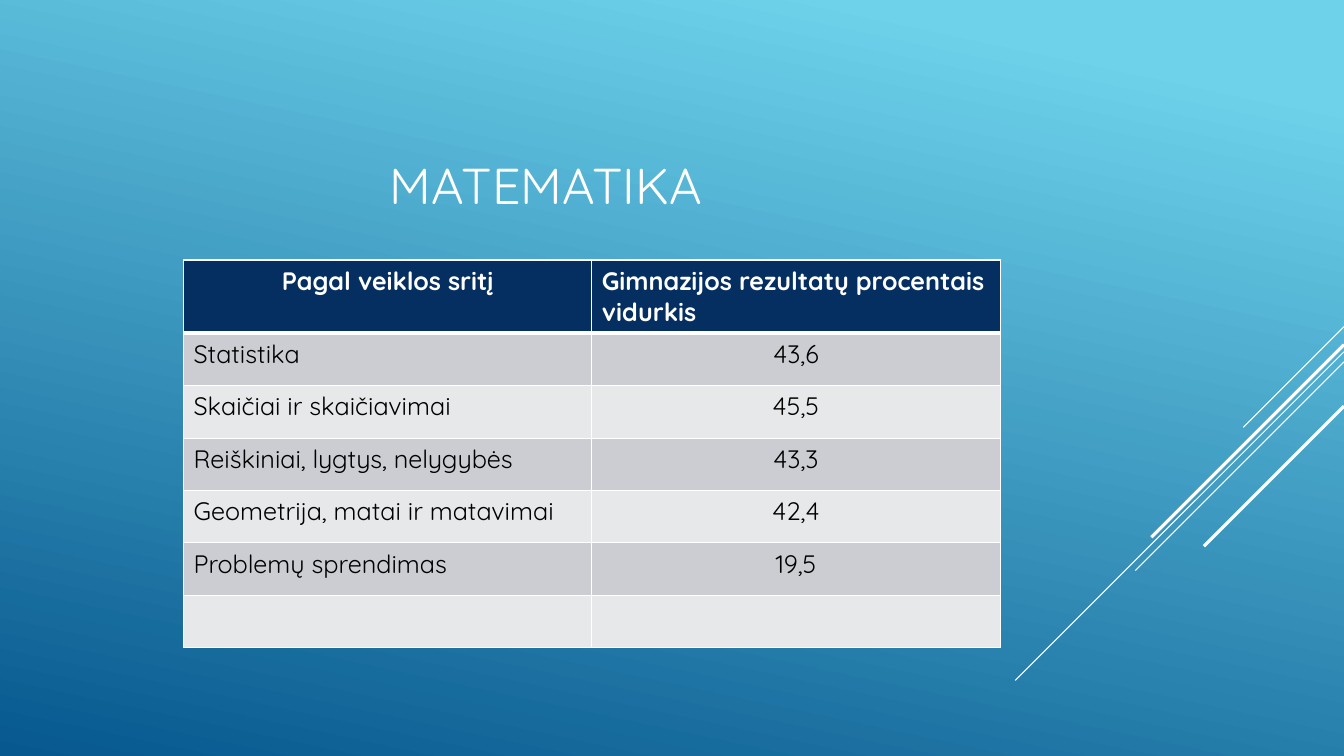
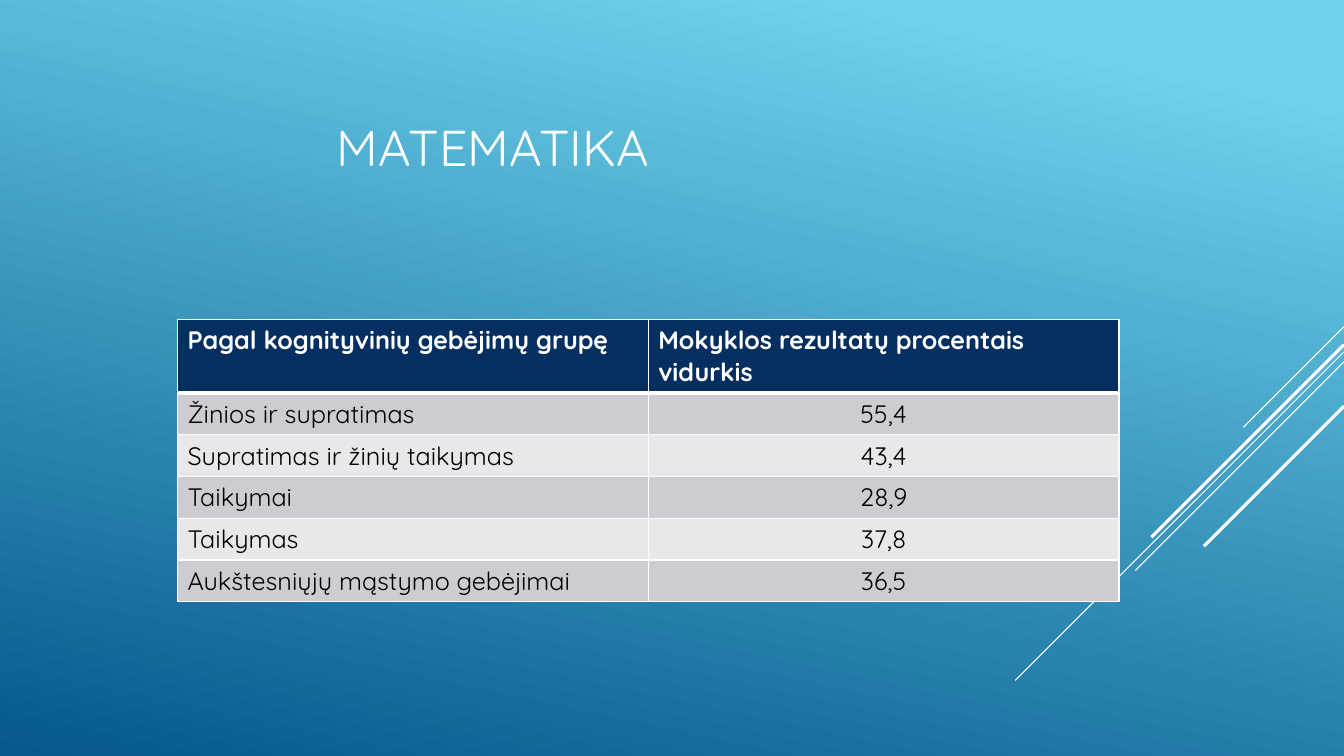
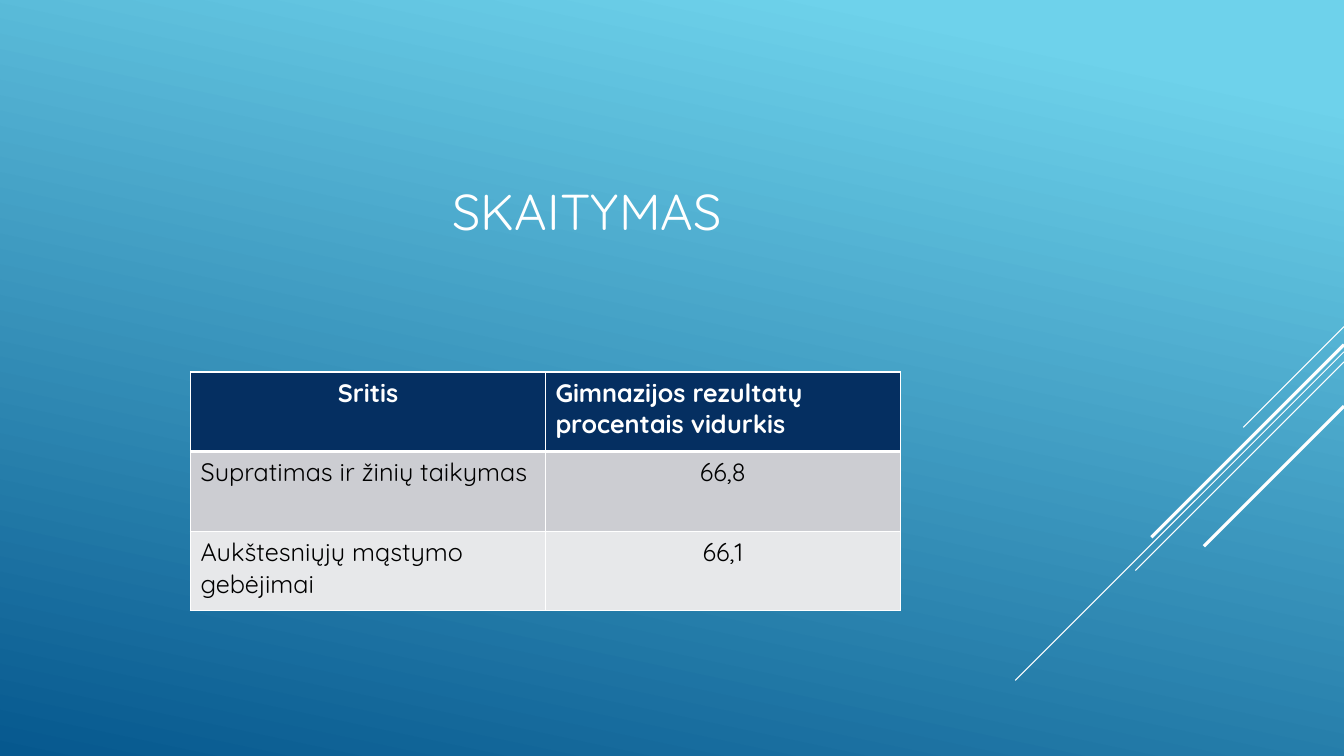
"""Build three slides of school test results as tables on a blue gradient."""
import lxml.etree
import pptx
import pptx.dml.color
import pptx.enum.shapes
import pptx.enum.text
import pptx.oxml.ns
import pptx.shapes.connector
import pptx.util

Inches = pptx.util.Inches
Pt = pptx.util.Pt
qn = pptx.oxml.ns.qn
ALIGN = pptx.enum.text.PP_ALIGN

FONT = "Quicksand"
COLOURS = {
    "sky": "6ED2EB",
    "deep": "06588E",
    "white": "FFFFFF",
    "black": "000000",
    "header": "052F61",
    "odd_row": "CCCDD2",
    "even_row": "E7E8EA",
}
SLIDE_WIDTH, SLIDE_HEIGHT = 13.33, 7.5
DIAGONALS = [
    (3.24, 1.0, 0.75),
    (3.49, 3.26, 0.75),
    (3.59, 2.07, 0.75),
    (3.42, 1.91, 2.25),
    (4.03, 1.39, 2.25),
]
RESULTS = [
    {
        "title": "MATEMATIKA",
        "title_box": (0.75, 0.87, 9.33, 1.31),
        "table_at": (1.82, 2.58),
        "column_width": 4.05,
        "row_heights": (0.72, 0.52),
        "header_align": ALIGN.CENTER,
        "rows": [
            ("Pagal veiklos sritį", "Gimnazijos rezultatų procentais vidurkis"),
            ("Statistika", "43,6"),
            ("Skaičiai ir skaičiavimai", "45,5"),
            ("Reiškiniai, lygtys, nelygybės", "43,3"),
            ("Geometrija, matai ir matavimai", "42,4"),
            ("Problemų sprendimas", "19,5"),
            ("", ""),
        ],
    },
    {
        "title": "MATEMATIKA",
        "title_box": (0.68, 0.29, 8.42, 1.51),
        "table_at": (1.76, 3.17),
        "column_width": 4.67,
        "row_heights": (0.73, 0.41),
        "header_align": ALIGN.LEFT,
        "rows": [
            ("Pagal kognityvinių gebėjimų grupę", "Mokyklos rezultatų procentais vidurkis"),
            ("Žinios ir supratimas", "55,4"),
            ("Supratimas ir žinių taikymas", "43,4"),
            ("Taikymai", "28,9"),
            ("Taikymas", "37,8"),
            ("Aukštesniųjų mąstymo gebėjimai", "36,5"),
        ],
    },
    {
        "title": "SKAITYMAS",
        "title_box": (0.75, 0.58, 10.15, 1.86),
        "table_at": (1.89, 3.69),
        "column_width": 3.52,
        "row_heights": (0.79, 0.79),
        "header_align": ALIGN.CENTER,
        "rows": [
            ("Sritis", "Gimnazijos rezultatų procentais vidurkis"),
            ("Supratimas ir žinių taikymas", "66,8"),
            ("Aukštesniųjų mąstymo gebėjimai", "66,1"),
        ],
    },
]


def rgb(name):
    """Return the named colour."""
    return pptx.dml.color.RGBColor.from_string(COLOURS[name])


def format_text(paragraph, size, colour, align, bold=False):
    """Set the font and alignment of a paragraph."""
    paragraph.alignment = align
    paragraph.font.name = FONT
    paragraph.font.size = Pt(size)
    paragraph.font.bold = bold
    paragraph.font.color.rgb = rgb(colour)


def paint_background(master):
    """Give the master its blue gradient."""
    fill = master.background.fill
    fill.gradient()
    fill.gradient_angle = 258
    for stop, position, name in zip(fill.gradient_stops, (0.1, 1), ("sky", "deep")):
        stop.position = position
        stop.color.rgb = rgb(name)


def add_diagonals(layout):
    """Draw the 45-degree lines that run in from the right edge."""
    for number, (top, reach, weight) in enumerate(DIAGONALS, 100):
        element = layout.shapes.element.add_cxnSp(
            number, f"Diagonal {number}", pptx.enum.shapes.MSO_CONNECTOR.STRAIGHT,
            Inches(SLIDE_WIDTH - reach), Inches(top), Inches(reach), Inches(reach), True, False)
        diagonal = pptx.shapes.connector.Connector(element, layout.shapes)
        diagonal.line.color.rgb = rgb("white")
        diagonal.line.width = Pt(weight)
        lxml.etree.SubElement(element.spPr, qn("a:effectLst"))


def set_title(slide, text, box):
    """Place and format the slide title."""
    title = slide.shapes.title
    title.left, title.top, title.width, title.height = map(Inches, box)
    title.text_frame.text = text
    title.text_frame.word_wrap = True
    title.text_frame.auto_size = pptx.enum.text.MSO_AUTO_SIZE.NONE
    title.text_frame.vertical_anchor = pptx.enum.text.MSO_ANCHOR.BOTTOM
    format_text(title.text_frame.paragraphs[0], 36, "white", ALIGN.CENTER)


def set_borders(cell, top, bottom):
    """Draw white cell borders with the given top and bottom weights."""
    properties = cell._tc.get_or_add_tcPr()
    for side, weight in (("L", 1), ("R", 1), ("T", top), ("B", bottom)):
        border = lxml.etree.SubElement(properties, qn(f"a:ln{side}"), w=str(Pt(weight)))
        fill = lxml.etree.SubElement(border, qn("a:solidFill"))
        lxml.etree.SubElement(fill, qn("a:srgbClr"), val=COLOURS["white"])


def fill_cell(cell, text, row, align):
    """Write one table cell in the style of its row."""
    is_header = row == 0
    set_borders(cell, 3 if row == 1 else 1, 3 if is_header else 1)
    cell.fill.solid()
    cell.fill.fore_color.rgb = rgb("header" if is_header else "odd_row" if row % 2 else "even_row")
    cell.text = text
    format_text(cell.text_frame.paragraphs[0], 18, "white" if is_header else "black", align, is_header)


def add_results_table(slide, rows, table_at, column_width, row_heights, header_align):
    """Add the two-column table of areas and their average results."""
    header_height, body_height = row_heights
    height = header_height + body_height * (len(rows) - 1)
    left, top = table_at
    table = slide.shapes.add_table(
        len(rows), 2, Inches(left), Inches(top), Inches(2 * column_width), Inches(height)).table
    for column in table.columns:
        column.width = Inches(column_width)
    for row, texts in enumerate(rows):
        table.rows[row].height = Inches(body_height if row else header_height)
        aligns = (ALIGN.LEFT, ALIGN.CENTER) if row else (header_align, ALIGN.LEFT)
        for column, (text, align) in enumerate(zip(texts, aligns)):
            fill_cell(table.cell(row, column), text, row, align)


def main():
    """Build and save the presentation."""
    deck = pptx.Presentation()
    deck.slide_width, deck.slide_height = Inches(SLIDE_WIDTH), Inches(SLIDE_HEIGHT)
    title_only = deck.slide_layouts[5]
    paint_background(deck.slide_master)
    add_diagonals(title_only)
    for result in RESULTS:
        slide = deck.slides.add_slide(title_only)
        set_title(slide, result["title"], result["title_box"])
        add_results_table(slide, result["rows"], result["table_at"], result["column_width"],
                          result["row_heights"], result["header_align"])
    deck.save("out.pptx")


if __name__ == "__main__":
    main()
